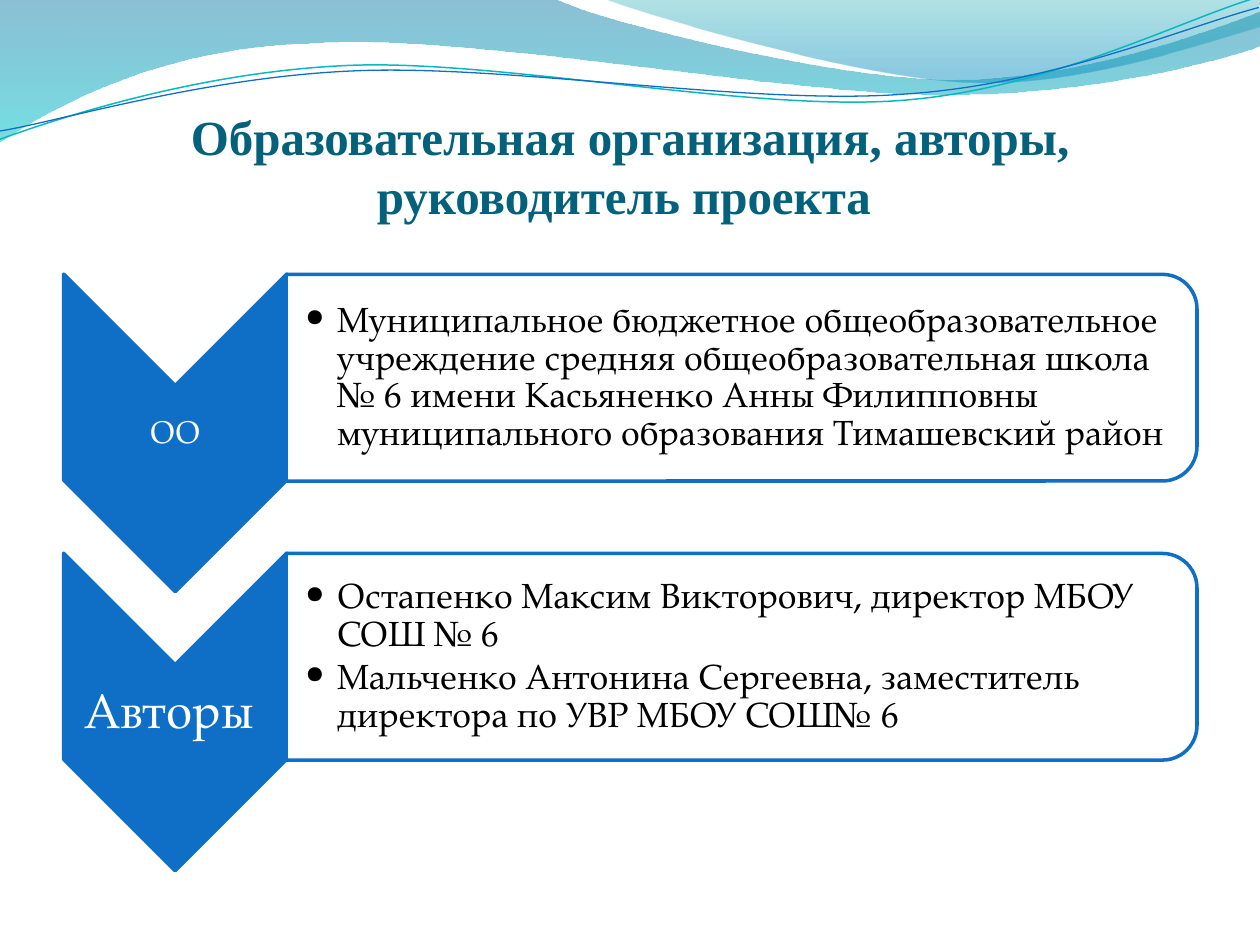
from lxml import etree
from pptx import Presentation
from pptx.dml.color import RGBColor
from pptx.enum.shapes import MSO_SHAPE
from pptx.enum.text import MSO_ANCHOR, PP_ALIGN
from pptx.oxml.ns import qn
from pptx.util import Inches, Pt

CHEVRON, ROUND_TOP = MSO_SHAPE.CHEVRON, MSO_SHAPE.ROUND_2_SAME_RECTANGLE
MIDDLE, BOTTOM = MSO_ANCHOR.MIDDLE, MSO_ANCHOR.BOTTOM
CENTER, LEFT = PP_ALIGN.CENTER, PP_ALIGN.LEFT
COLUMNS, ROWS = 100, 75
COLORS = {
    "blue": "0F6FC6", "turquoise": "0AB8BF", "title": "04617B",
    "white": "FFFFFF", "black": "000000",
    "deep": "0074A1", "cyan": "00C6CF", "teal": "00A1A9", "azure": "008BBF",
}
HEADING_FONT, BODY_FONT = "Times New Roman", "TeX Gyre Pagella"
TITLE = {"size": 28, "name": HEADING_FONT, "bold": True, "color": "title"}
BODY = {"size": 20, "name": BODY_FONT, "color": "black"}
PITCH = 22.15
RIBBON_TURN = 357.3

WAVES = [
    ((-0.1, -0.1, 100.2, 11.4), (0, 0), [
        [(44, -0.1)], [(47.6, 1.7), (66.4, 6.3), (75.8, 6.3)],
        [(85.3, 6.3), (95.8, 2.6), (100, 0.9)], [(100.1, 3.6)],
        [(98.3, 4.4), (87, 7.6), (74.6, 7.5)],
        [(62.2, 7.5), (38.2, 2.8), (25.7, 3.4)],
        [(12.9, 3.6), (4.6, 8.3), (-0.1, 11.3)], [(0, 0)],
    ], [(0, "deep", 45), (1, "cyan", 55)]),
    ((47.9, -0.1, 52.1, 7), (47.9, -0.1), [
        [(50.9, 1.1), (68.2, 6.2), (76.9, 6.5)],
        [(85.6, 6.9), (96.1, 3.2), (100, 2.1)], [(100, 0)], [(47.9, -0.1)],
    ], [(0, "teal", 30), (0.8, "azure", 45)]),
]
RIBBONS = [
    ((-0.2, 2.2, 100.2, 7.1), (-0.2, 8.7), [
        [(4.7, 7.2), (15.8, 4.1), (27.7, 4.15)],
        [(39.5, 4.2), (59.1, 9.3), (71.2, 9)],
        [(83.2, 8.7), (94, 3.6), (100, 2.15)],
    ], "turquoise", 0.85),
    ((-0.2, 3, 100.3, 5.8), (-0.2, 8.05), [
        [(4.6, 7.5), (16.4, 4.5), (28.3, 4.6)],
        [(40.3, 4.65), (59.6, 8.85), (71.6, 8.5)],
        [(83.5, 8.3), (94.2, 4.2), (100.1, 2.95)],
    ], "blue", 0.75),
]
SECTIONS = [
    ("ОО", 18, [
        "Муниципальное бюджетное общеобразовательное учреждение средняя "
        "общеобразовательная школа № 6 имени Касьяненко Анны Филипповны "
        "муниципального образования Тимашевский район",
    ]),
    ("Авторы ", 28, [
        "Остапенко Максим Викторович, директор МБОУ СОШ № 6",
        "Мальченко Антонина Сергеевна, заместитель директора по УВР МБОУ СОШ№ 6",
    ]),
]


class Deck:
    """Holds the style, the grid and the current slide."""

    def __init__(self):
        self.prs = Presentation()
        self.prs.slide_width, self.prs.slide_height = Inches(10), Inches(7.5)
        self.slide = self.prs.slides.add_slide(self.prs.slide_layouts[6])

    def x(self, columns):
        return round(self.prs.slide_width * columns / COLUMNS)

    def y(self, rows):
        return round(self.prs.slide_height * rows / ROWS)

    def box(self, left, top, width, height):
        return self.x(left), self.y(top), self.x(width), self.y(height)

    def color(self, name):
        return RGBColor.from_string(COLORS[name])

    def outline(self, place, start, segments, close):
        left, top, width, height = self.box(*place)
        builder = self.slide.shapes.build_freeform(left, top)
        builder.add_line_segments([(left + width, top + height)], close=close)
        form = builder.convert_to_shape()
        form.shadow.inherit = False
        track = next(form._element.iter(qn("a:path")))
        for step in list(track):
            track.remove(step)
        for segment in [None, *segments]:
            points = segment or [start]
            tag = "a:moveTo" if segment is None else (
                "a:lnTo" if len(points) == 1 else "a:cubicBezTo")
            step = etree.SubElement(track, qn(tag))
            for x, y in points:
                point = etree.SubElement(step, qn("a:pt"))
                point.set("x", str(self.x(x) - left))
                point.set("y", str(self.y(y) - top))
        if close:
            etree.SubElement(track, qn("a:close"))
        return form

    def wave(self, place, start, segments, stops):
        form = self.outline(place, start, segments, True)
        form.line.fill.background()
        form.fill.gradient()
        form.fill.gradient_angle = 270
        tints = form._element.iter(qn("a:gs"))
        for stop, tint, (position, color, opacity) in zip(
                form.fill.gradient_stops, tints, stops):
            stop.position = position
            stop.color.rgb = self.color(color)
            etree.SubElement(tint[0], qn("a:alpha")).set("val", str(opacity * 1000))

    def ribbon(self, place, start, segments, color, weight):
        form = self.outline(place, start, segments, False)
        form.rotation = RIBBON_TURN
        form.fill.background()
        form.line.color.rgb = self.color(color)
        form.line.width = Pt(weight)

    def block(self, preset, place, fill):
        block = self.slide.shapes.add_shape(preset, *self.box(*place))
        block.shadow.inherit = False
        block.rotation = 90
        block.fill.solid()
        block.fill.fore_color.rgb = self.color(fill)
        block.line.color.rgb = self.color("blue")
        block.line.width = Pt(2)

    def text(self, place, paragraphs, style, anchor=MIDDLE, align=CENTER,
             insets=(0.01, 0.01, 0.01, 0.01), spacing=0.9, bullets=False):
        frame = self.slide.shapes.add_textbox(*self.box(*place)).text_frame
        sides = ("margin_left", "margin_top", "margin_right", "margin_bottom")
        layout = dict(zip(sides, map(Inches, insets)))
        layout.update(word_wrap=True, vertical_anchor=anchor)
        for key, value in layout.items():
            setattr(frame, key, value)
        for index, words in enumerate(paragraphs):
            line = frame.add_paragraph() if index else frame.paragraphs[0]
            line.alignment, line.line_spacing = align, spacing
            if bullets:
                self.bullet(line)
            run = line.add_run()
            run.text = words
            for key, value in style.items():
                if key == "color":
                    run.font.color.rgb = self.color(value)
                else:
                    setattr(run.font, key, Pt(value) if key == "size" else value)

    def bullet(self, line):
        line.level, line.space_after = 1, Pt(3)
        properties = line._p.get_or_add_pPr()
        properties.set("marL", str(Inches(0.25)))
        properties.set("indent", str(-Inches(0.25)))
        etree.SubElement(properties, qn("a:buFont")).set("typeface", BODY_FONT)
        etree.SubElement(properties, qn("a:buChar")).set("char", "•")


def main():
    deck = Deck()
    for wave in WAVES:
        deck.wave(*wave)
    for ribbon in RIBBONS:
        deck.ribbon(*ribbon)
    deck.text((5, 7.7, 90, 10.1),
              ["Образовательная организация, авторы, руководитель проекта "],
              TITLE, anchor=BOTTOM, insets=(0, 0.05, 0, 0), spacing=1.0)
    for row, (label, size, details) in enumerate(SECTIONS):
        offset = row * PITCH
        deck.block(CHEVRON, (1.3, 25.5 + offset, 25.2, 17.7), "blue")
        deck.text((5.05, 30.6 + offset, 17.7, 7.6), [label],
                  {"size": size, "name": BODY_FONT, "color": "white"})
        deck.block(ROUND_TOP, (50.65, -6.17 + offset, 16.4, 72.3), "white")
        deck.text((22.65, 22.57 + offset, 71.5, 14.8), details, BODY, align=LEFT,
                  insets=(0.16, 0.01, 0.01, 0.01), bullets=True)
    deck.prs.save("out.pptx")


if __name__ == "__main__":
    main()
